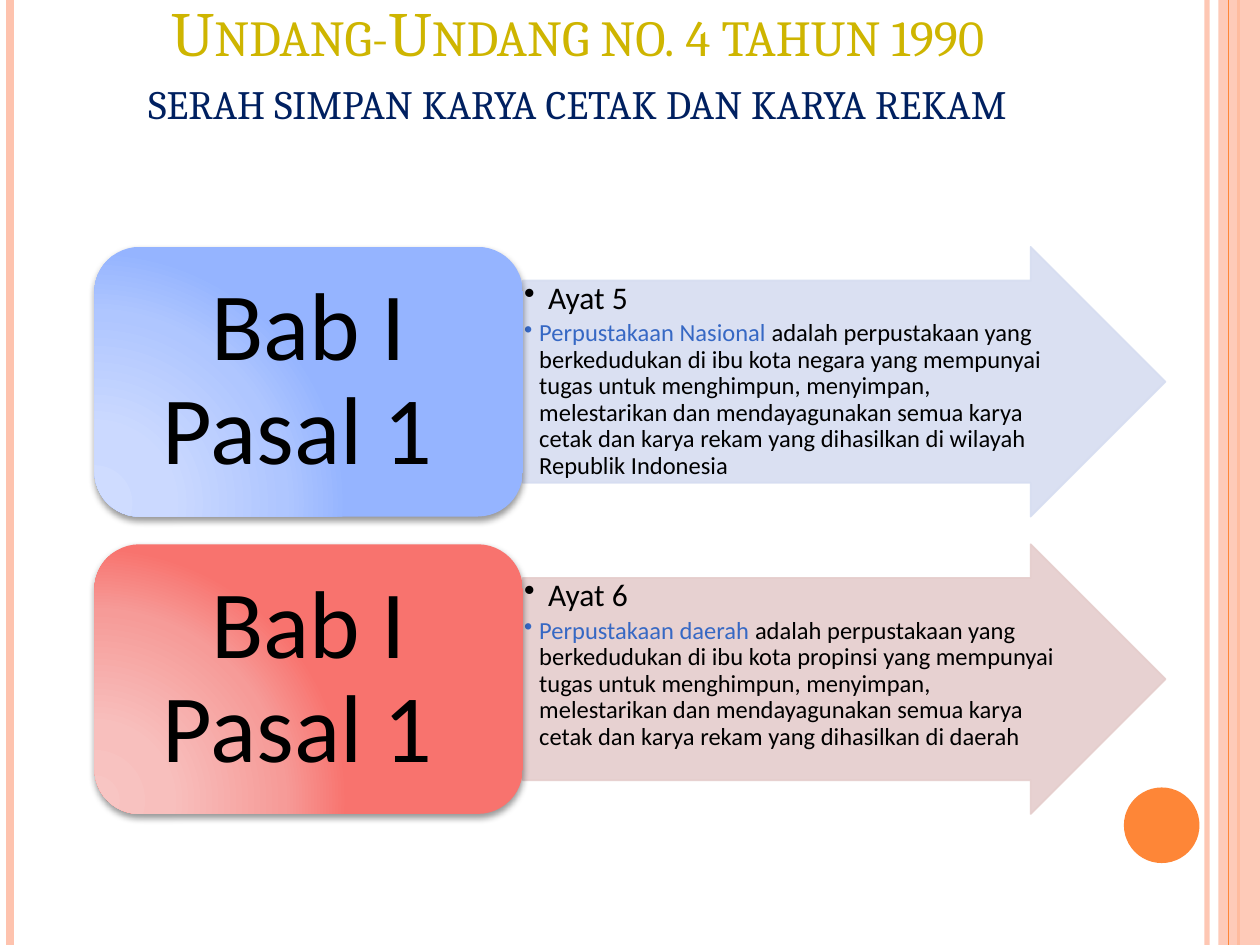
from lxml import etree
from pptx import Presentation
from pptx.dml.color import RGBColor
from pptx.enum.shapes import MSO_CONNECTOR, MSO_SHAPE
from pptx.enum.text import MSO_ANCHOR, PP_ALIGN
from pptx.oxml import parse_xml
from pptx.oxml.ns import nsdecls, qn
from pptx.util import Inches, Pt

PEACH, ORANGE, BLACK, LINK = "FEC3AE", "FE8637", "000000", "3668C4"

TITLE = [
    ("Undang-Undang no. 4 tahun 1990", 36, "CEB500"),
    ("serah simpan karya cetak dan karya rekam", 28.8, "002060"),
]
ARTICLES = [
    {"label": "Bab I Pasal 1 ", "verse": "Ayat 5", "term": "Perpustakaan Nasional ",
     "meaning": "adalah perpustakaan yang berkedudukan di ibu kota negara yang "
                "mempunyai tugas untuk menghimpun, menyimpan, melestarikan dan "
                "mendayagunakan semua karya cetak dan karya rekam yang dihasilkan "
                "di wilayah Republik Indonesia",
     "arrow": "D6DDF1", "shades": ("CFDCFF", "CBD9FF", "AFC6FF", "95B4FF")},
    {"label": "Bab I Pasal 1 ", "verse": "Ayat 6", "term": "Perpustakaan daerah ",
     "meaning": "adalah perpustakaan yang berkedudukan di ibu kota propinsi yang "
                "mempunyai tugas untuk menghimpun, menyimpan, melestarikan dan "
                "mendayagunakan semua karya cetak dan karya rekam yang dihasilkan "
                "di daerah",
     "arrow": "E5CDCC", "shades": ("F8C5C3", "F8BFBD", "F69B98", "F8736E")},
]
STOPS = (0, 30, 75, 100)
CARD_X, CARD_W, ARROW_W = 0.75, 3.4, 5.1
ROW_Y, ROW_H, ROW_STEP = 1.96, 2.14, 2.36
SHAFT = 0.75  # share of the arrow height


def paint(fmt, color, alpha=100):
    """Give a fill a solid colour with an opacity in percent."""
    fmt.solid()
    fmt.fore_color.rgb = RGBColor.from_string(color)
    if alpha < 100:
        clr = fmt.fore_color._xFill.find(qn("a:srgbClr"))
        etree.SubElement(clr, qn("a:alpha")).set("val", str(alpha * 1000))


def add_rule(x, color, width, alpha=100):
    """Draw a vertical line over the full slide height."""
    line = slide.shapes.add_connector(
        MSO_CONNECTOR.STRAIGHT, Inches(x), 0, Inches(x), prs.slide_height)
    line.line.width = Pt(width)
    paint(line.line.fill, color, alpha)
    etree.SubElement(line._element.spPr, qn("a:effectLst"))


def add_shape(kind, x, y, w, h, color, alpha=100):
    sp = slide.shapes.add_shape(kind, Inches(x), Inches(y), Inches(w), Inches(h))
    sp.shadow.inherit = False
    paint(sp.fill, color, alpha)
    sp.line.fill.background()
    return sp


def add_text_box(x, y, w, h):
    return slide.shapes.add_textbox(Inches(x), Inches(y), Inches(w), Inches(h)).text_frame


def set_frame(tf, anchor, left, top, right, bottom):
    tf.word_wrap = True
    tf.vertical_anchor = anchor
    tf.margin_left, tf.margin_top = Inches(left), Inches(top)
    tf.margin_right, tf.margin_bottom = Inches(right), Inches(bottom)


def add_run(p, text, size, color, font="Calibri"):
    r = p.add_run()
    r.text = text
    r.font.size, r.font.name = Pt(size), font
    r.font.color.rgb = RGBColor.from_string(color)
    return r


def add_bullet(p, indent, color):
    pPr = p._p.get_or_add_pPr()
    pPr.set("marL", str(Inches(indent)))
    pPr.set("indent", str(-Inches(indent)))
    clr = etree.SubElement(pPr, qn("a:buClr"))
    etree.SubElement(clr, qn("a:srgbClr")).set("val", color)
    etree.SubElement(pPr, qn("a:buChar")).set("char", "•")


def shade_card(sp, shades):
    """Radial gradient from the lower left corner, with a soft shadow below."""
    stops = "".join(f'<a:gs pos="{pos * 1000}"><a:srgbClr val="{c}"/></a:gs>'
                    for pos, c in zip(STOPS, shades))
    spPr = sp._element.spPr
    spPr.replace(spPr.find(qn("a:solidFill")), parse_xml(
        f'<a:gradFill {nsdecls("a")} rotWithShape="1"><a:gsLst>{stops}</a:gsLst>'
        '<a:path path="circle"><a:fillToRect l="5000" t="100000" r="120000" b="10000"/>'
        '</a:path></a:gradFill>'))
    spPr.replace(spPr.find(qn("a:effectLst")), parse_xml(
        f'<a:effectLst {nsdecls("a")}><a:outerShdw blurRad="{Pt(4)}" dist="{Pt(2)}" '
        'dir="5400000" rotWithShape="0"><a:srgbClr val="000000"><a:alpha val="40000"/>'
        '</a:srgbClr></a:outerShdw></a:effectLst>'))


def add_article(y, art):
    arrow_x = CARD_X + CARD_W
    arrow = add_shape(MSO_SHAPE.RIGHT_ARROW, arrow_x, y, ARROW_W, ROW_H, art["arrow"], 90)
    arrow.adjustments[0], arrow.adjustments[1] = SHAFT, 0.5
    arrow.line.width = Pt(1)
    paint(arrow.line.fill, art["arrow"], 90)

    shaft_h = ROW_H * SHAFT
    tf = add_text_box(arrow_x, y + (ROW_H - shaft_h) / 2, ARROW_W - ROW_H * 0.375, shaft_h)
    set_frame(tf, MSO_ANCHOR.TOP, 0.01, 0.01, 0.01, 0.01)
    verse, body = tf.paragraphs[0], tf.add_paragraph()
    for p, size, indent, color in ((verse, 18, 0.19, BLACK), (body, 14, 0.12, LINK)):
        p.line_spacing = 0.9
        p.space_after = Pt(size * 0.15)
        add_bullet(p, indent, color)
    add_run(verse, art["verse"], 18, BLACK)
    add_run(body, art["term"], 14, LINK)
    add_run(body, art["meaning"], 14, BLACK)

    card = add_shape(MSO_SHAPE.ROUNDED_RECTANGLE, CARD_X, y, CARD_W, ROW_H, art["shades"][-1])
    shade_card(card, art["shades"])
    set_frame(card.text_frame, MSO_ANCHOR.MIDDLE, 0.23, 0.11, 0.23, 0.11)
    p = card.text_frame.paragraphs[0]
    p.alignment, p.line_spacing = PP_ALIGN.CENTER, 0.9
    add_run(p, art["label"], 55, BLACK)


prs = Presentation()
prs.slide_width, prs.slide_height = Inches(10), Inches(7.5)
slide = prs.slides.add_slide(prs.slide_layouts[6])

add_rule(9.58, PEACH, 3, 93)
add_rule(0.08, PEACH, 4.5)
add_rule(9.83, ORANGE, 1.5)
add_shape(MSO_SHAPE.RECTANGLE, 9.67, 0, 0.33, 7.5, PEACH, 87)
add_rule(9.75, ORANGE, 0.75)
add_shape(MSO_SHAPE.OVAL, 8.92, 6.25, 0.6, 0.6, ORANGE)

title = add_text_box(0.5, 0.3, 8.17, 1.25)
set_frame(title, MSO_ANCHOR.BOTTOM, 0.1, 0.05, 0.1, 0.52)
for i, (text, size, color) in enumerate(TITLE):
    p = title.add_paragraph() if i else title.paragraphs[0]
    p.alignment = PP_ALIGN.CENTER
    r = add_run(p, text, size, color, "Cambria")
    r.font._element.set("cap", "small")

for row, art in enumerate(ARTICLES):
    add_article(ROW_Y + row * ROW_STEP, art)

prs.save("out.pptx")
